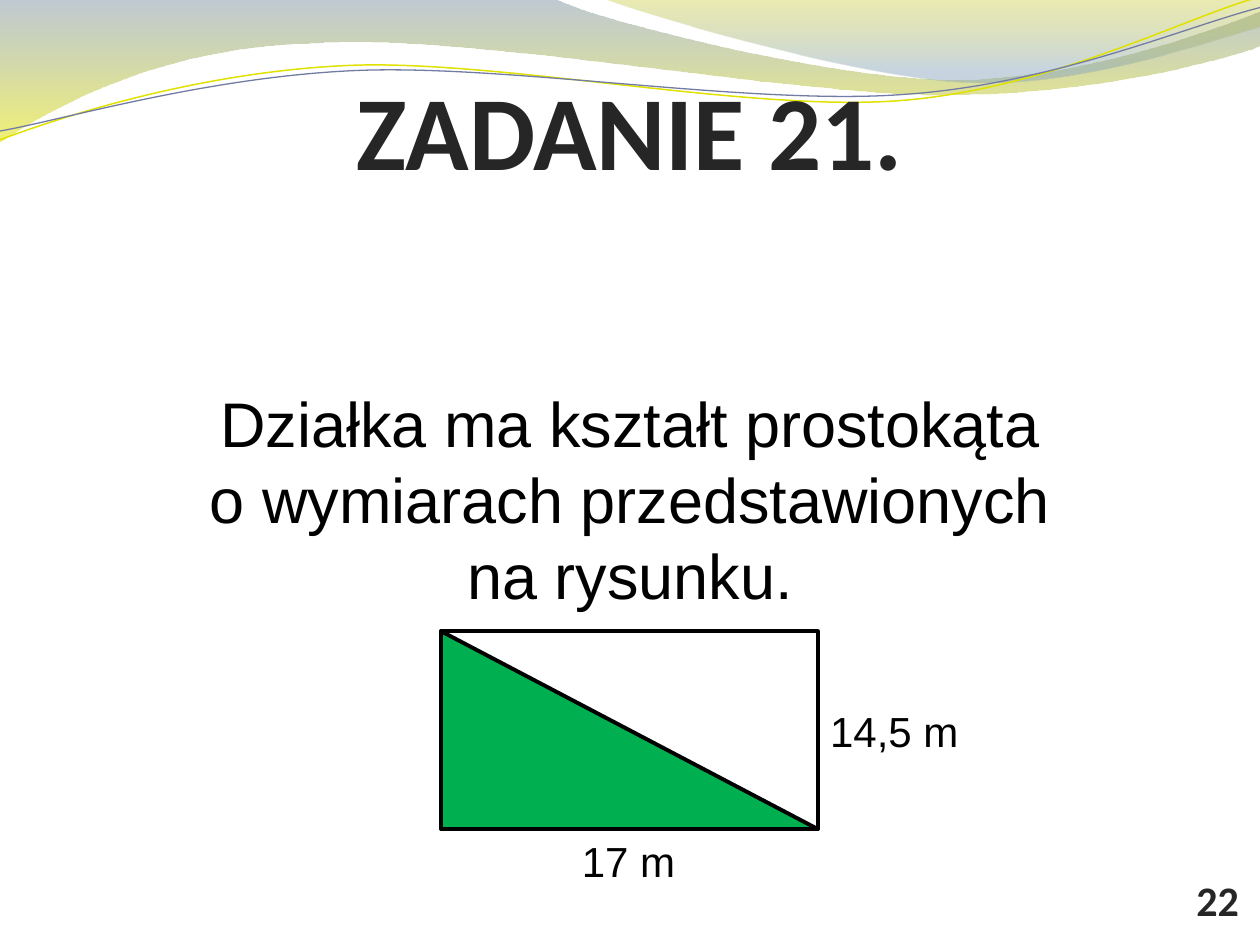
"""Build a geometry exercise slide with a wave header and a labelled plot of land."""
from dataclasses import dataclass

from lxml.etree import SubElement
from pptx import Presentation
from pptx.dml.color import RGBColor
from pptx.enum.shapes import MSO_SHAPE
from pptx.enum.text import MSO_ANCHOR, PP_ALIGN
from pptx.oxml.ns import qn
from pptx.util import Inches, Pt


@dataclass(frozen=True)
class Theme:
    heading: str = "Calibri"
    body: str = "Arial"
    dark: str = "262626"
    black: str = "000000"
    green: str = "00B050"
    title_size: int = 60
    body_size: int = 36
    label_size: int = 24
    outline: float = 2.25


THEME = Theme()
COLS, ROWS = 100, 75
CELL = Inches(10) // COLS
NBSP = chr(160)

BANDS = [
    {"start": (0, 0),
     "segments": [(44, -0.1), (47.6, 1.7, 66.4, 6.3, 75.8, 6.3),
                  (85.3, 6.3, 95.8, 2.6, 100, 0.9), (100.1, 3.6),
                  (98.3, 4.4, 87, 7.6, 74.6, 7.5), (62.2, 7.5, 38.2, 2.8, 25.7, 3.4),
                  (12.9, 3.6, 4.6, 8.3, -0.1, 11.3)],
     "stops": [(0, "72889B", 45), (100, "E7E700", 55)]},
    {"start": (47.9, -0.1),
     "segments": [(50.9, 1.1, 68.2, 6.2, 76.9, 6.5), (85.6, 6.9, 96.1, 3.2, 100, 2.1),
                  (100, 0)],
     "stops": [(0, "BDBD00", 30), (80, "84A3BD", 45)]},
]
STRANDS = [
    {"start": (0, 11.1),
     "segments": [(4.8, 9.3, 15.8, 5.7, 27.7, 5.2), (39.5, 4.7, 59.3, 8.9, 71.3, 8),
                  (83.3, 7.1, 93.8, 1.5, 99.8, -0.2)],
     "color": "E1E100", "width": 0.85},
    {"start": (0, 10.4),
     "segments": [(4.7, 9.6, 16.4, 6.1, 28.3, 5.6), (40.3, 5.1, 59.7, 8.4, 71.7, 7.5),
                  (83.6, 6.7, 94.1, 2.1, 100, 0.6)],
     "color": "727CA3", "width": 0.75},
]

PLOT = (35, 50.1, 29.9, 15.7)
PLOT_SHAPES = [(MSO_SHAPE.RECTANGLE, None), (MSO_SHAPE.RIGHT_TRIANGLE, THEME.green)]
HEADING = {"font": THEME.heading, "color": THEME.dark, "bold": True,
           "align": PP_ALIGN.CENTER, "insets": (0, 0, 0, 0)}
LABEL = {"size": THEME.label_size}
TEXTS = [
    ("ZADANIE 21.", (7.5, 3.9, 85, 12.6),
     {**HEADING, "size": THEME.title_size, "anchor": MSO_ANCHOR.MIDDLE}),
    (f"Działka ma kształt prostokąta o{NBSP}wymiarach przedstawionych na{NBSP}rysunku.",
     (6.9, 17.8, 86.2, 50),
     {"size": THEME.body_size, "align": PP_ALIGN.CENTER, "anchor": MSO_ANCHOR.MIDDLE,
      "insets": (1, 0.5, 1, 7)}),
    ("22", (93.3, 69, 6.7, 4.4),
     {**HEADING, "size": THEME.label_size, "anchor": MSO_ANCHOR.BOTTOM}),
    ("17 m", (45.2, PLOT[1] + PLOT[3], 9.5, 5), {**LABEL, "wrap": False}),
    ("14,5 m", (PLOT[0] + PLOT[2], 55.5, 12.6, 5), LABEL),
]


def cells(values):
    return [round(v * CELL) for v in values]


def bend(path, segments):
    lines = path.findall(qn("a:lnTo"))
    for seg in segments:
        count = len(seg) // 2
        group, lines = lines[:count], lines[count:]
        if count == 3:
            curve = SubElement(path, qn("a:cubicBezTo"))
            group[0].addprevious(curve)
            for line in group:
                curve.append(line[0])
                path.remove(line)


def add_curve(slide, start, segments, close):
    points = [cells(seg[i:i + 2]) for seg in segments for i in range(0, len(seg), 2)]
    builder = slide.shapes.build_freeform(*cells(start), scale=1.0)
    builder.add_line_segments(points, close=close)
    sp = builder.convert_to_shape()
    sp.shadow.inherit = False
    bend(next(sp.element.iter(qn("a:path"))), segments)
    return sp


def set_line(sp, color, width):
    sp.line.color.rgb = RGBColor.from_string(color)
    sp.line.width = Pt(width)


def add_band(slide, band):
    sp = add_curve(slide, band["start"], band["segments"], True)
    sp.line.fill.background()
    sp.fill.gradient()
    sp.fill.gradient_angle = 270
    stops = sp.element.spPr.find(qn("a:gradFill")).find(qn("a:gsLst"))
    for old in list(stops):
        stops.remove(old)
    for pos, color, opacity in band["stops"]:
        stop = SubElement(stops, qn("a:gs"), pos=str(pos * 1000))
        rgb = SubElement(stop, qn("a:srgbClr"), val=color)
        SubElement(rgb, qn("a:alpha"), val=str(opacity * 1000))


def add_strand(slide, strand):
    sp = add_curve(slide, strand["start"], strand["segments"], False)
    sp.fill.background()
    set_line(sp, strand["color"], strand["width"])


def add_plot_shape(slide, kind, fill):
    sp = slide.shapes.add_shape(kind, *cells(PLOT))
    sp.shadow.inherit = False
    set_line(sp, THEME.black, THEME.outline)
    if fill:
        sp.fill.solid()
        sp.fill.fore_color.rgb = RGBColor.from_string(fill)
    else:
        sp.fill.background()


def add_text(slide, text, box, size, font=THEME.body, color=THEME.black, bold=False,
             align=PP_ALIGN.LEFT, anchor=MSO_ANCHOR.TOP, insets=(1, 0.5, 1, 0.5),
             wrap=True):
    tf = slide.shapes.add_textbox(*cells(box)).text_frame
    tf.word_wrap = wrap
    tf.vertical_anchor = anchor
    tf.margin_left, tf.margin_top, tf.margin_right, tf.margin_bottom = cells(insets)
    tf.text = text
    p = tf.paragraphs[0]
    p.alignment = align
    r = p.runs[0]
    r.font.name, r.font.size, r.font.bold = font, Pt(size), bold
    r.font.color.rgb = RGBColor.from_string(color)


def main():
    prs = Presentation()
    prs.slide_width, prs.slide_height = cells((COLS, ROWS))
    slide = prs.slides.add_slide(prs.slide_layouts[6])
    for band in BANDS:
        add_band(slide, band)
    for strand in STRANDS:
        add_strand(slide, strand)
    for kind, fill in PLOT_SHAPES:
        add_plot_shape(slide, kind, fill)
    for text, box, style in TEXTS:
        add_text(slide, text, box, **style)
    prs.save("out.pptx")


if __name__ == "__main__":
    main()
